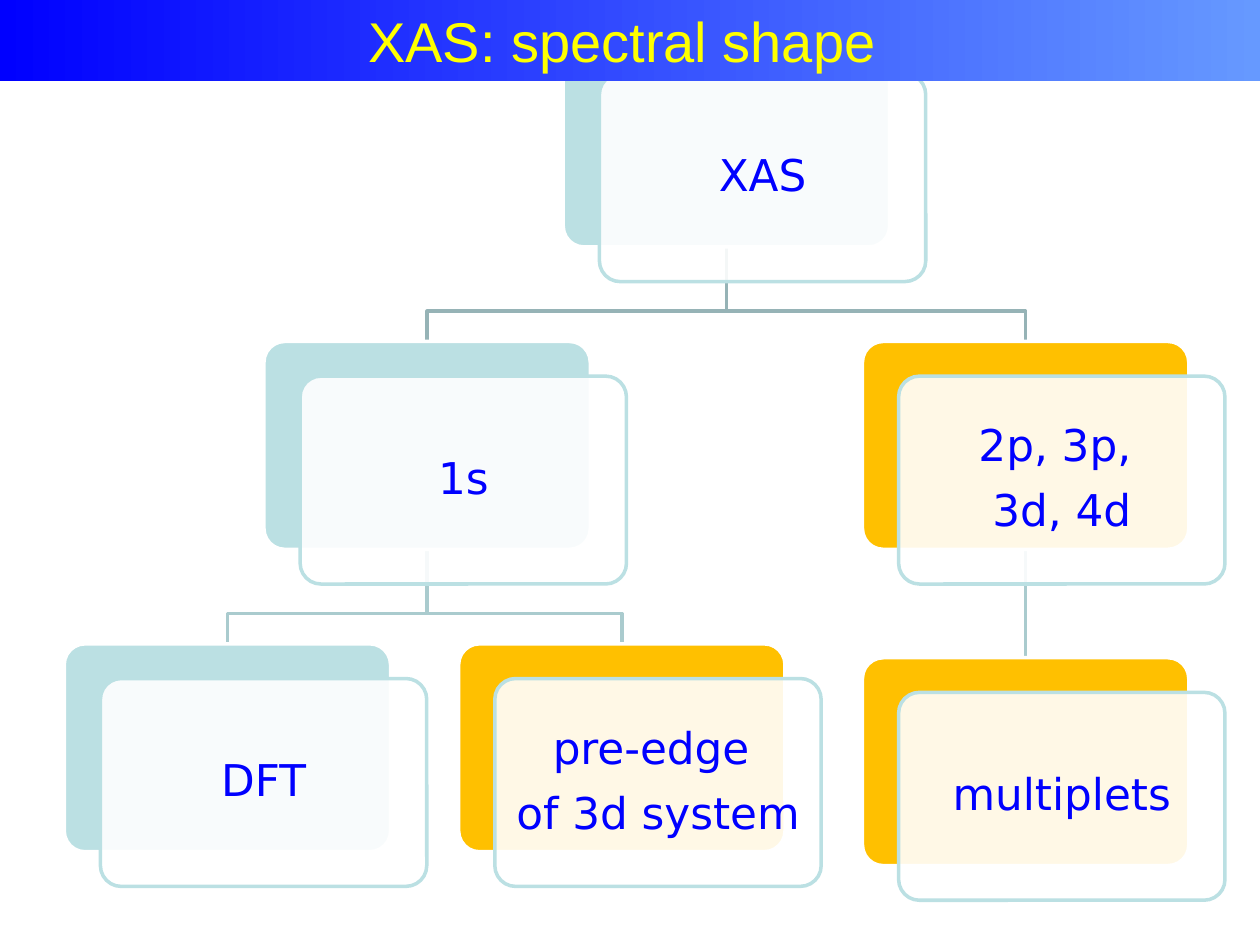
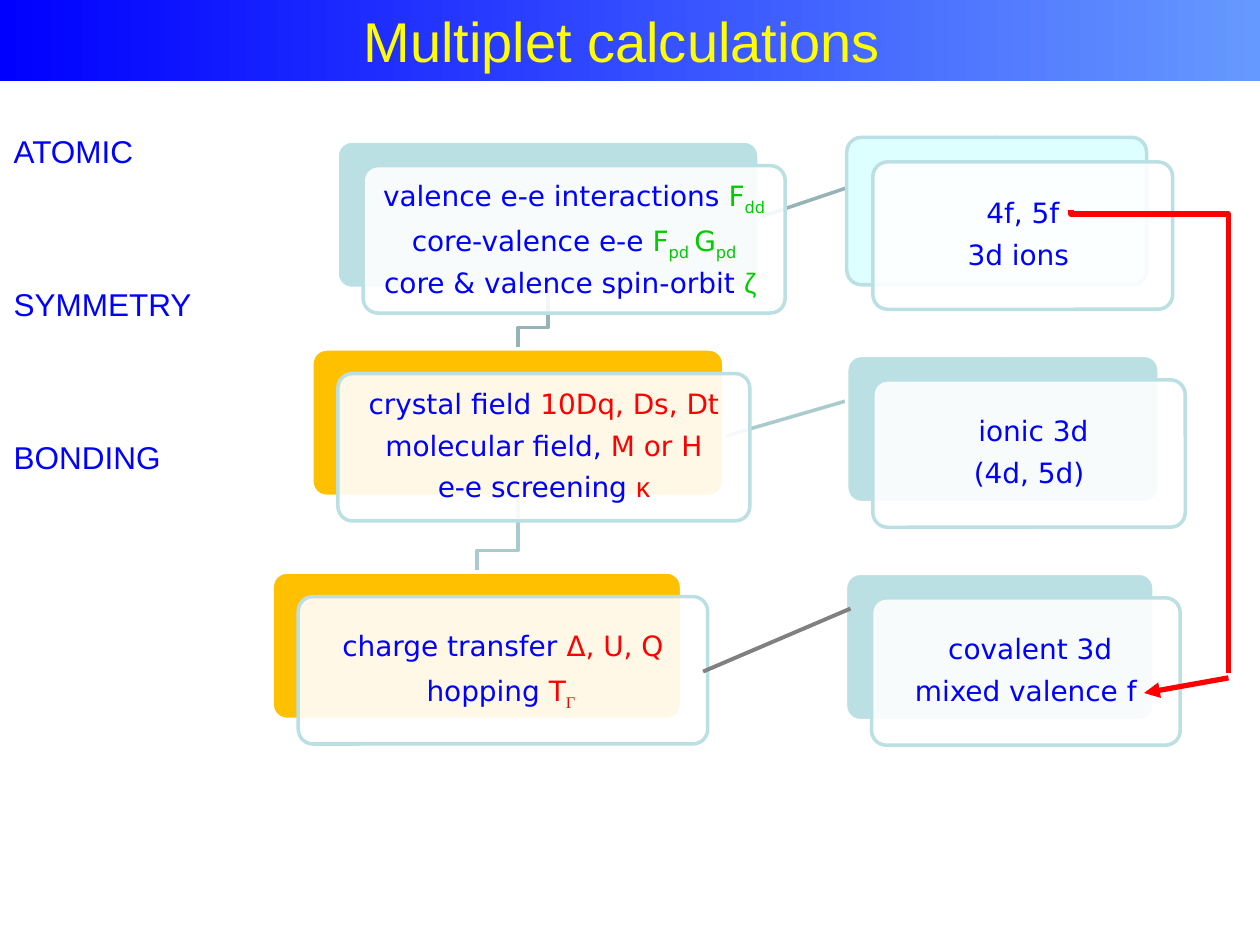
from dataclasses import dataclass
from typing import Any, NamedTuple

from lxml.etree import SubElement
from pptx import Presentation
from pptx.dml.color import RGBColor as Rgb
from pptx.enum.shapes import MSO_CONNECTOR as Route, MSO_SHAPE as Preset
from pptx.enum.text import MSO_ANCHOR as Anchor, PP_ALIGN as Align
from pptx.oxml.ns import qn
from pptx.util import Inches, Pt

SLIDE_WIDTH, SLIDE_HEIGHT = Inches(10), Inches(7.5)
COLUMNS, ROWS = 100, 75


@dataclass(frozen=True)
class Theme:
    blue: str = "0000FF"
    band_end: str = "6699FF"
    yellow: str = "FFFF00"
    white: str = "FFFFFF"
    teal: str = "BBE0E3"
    pale: str = "DDFFFF"
    amber: str = "FFC000"
    green: str = "00CC00"
    red: str = "FF0000"
    gray: str = "808080"
    root_link: str = "96B3B6"
    inner_link: str = "AACBCE"
    title_size: int = 32
    tree_size: int = 25
    label_size: int = 18
    detail_size: int = 16
    sans: str = "Arial"
    card_font: str = "DejaVu Sans"
    serif: str = "Times New Roman"


THEME = Theme()


class Span(NamedTuple):
    text: str
    color: str = THEME.blue
    font: str = THEME.card_font
    lowered: bool = False


class Point(NamedTuple):
    column: float
    row: float


class CardStyle(NamedTuple):
    height: float
    shift: Point
    inset: float
    text_size: int
    elbow_gap: float


@dataclass(frozen=True)
class Card:
    left: float
    top: float
    width: float
    lines: tuple[tuple[Span, ...], ...]
    fill: str = THEME.teal
    border: str = THEME.white

    def top_center(self) -> Point:
        return Point(self.left + self.width / 2, self.top)

    def bottom_center(self, style: CardStyle) -> Point:
        return Point(self.left + self.width / 2, self.top + style.height)


class Link(NamedTuple):
    parent: str
    child: str
    color: str
    direct: bool = False


TREE = CardStyle(16.5, Point(2.87, 2.75), 0.09, THEME.tree_size, 2.4)
DETAIL = CardStyle(11.7, Point(2.07, 1.95), 0.06, THEME.detail_size, 1.7)


def x(columns: float) -> int:
    return round(SLIDE_WIDTH * columns / COLUMNS)


def y(rows: float) -> int:
    return round(SLIDE_HEIGHT * rows / ROWS)


def box(left: float, top: float, width: float, height: float) -> tuple[int, ...]:
    return x(left), y(top), x(width), y(height)


def assign(target: Any, values: dict[str, Any]) -> None:
    for key, value in values.items():
        setattr(target, key, value)


def plain(*texts: str) -> tuple[tuple[Span, ...], ...]:
    return tuple((Span(text),) for text in texts)


def stroke(line: Any, color: str, width: float) -> None:
    line.color.rgb = Rgb.from_string(color)
    line.width = Pt(width)


def write(paragraph: Any, spans: tuple[Span, ...], size: int) -> None:
    for span in spans:
        run = paragraph.add_run()
        run.text = span.text
        assign(run.font, {"size": Pt(size), "name": span.font})
        run.font.color.rgb = Rgb.from_string(span.color)
        if span.lowered:
            run.font._element.set("baseline", "-25000")


def write_lines(frame: Any, lines: tuple[tuple[Span, ...], ...], size: int,
                layout: dict[str, Any]) -> None:
    for index, spans in enumerate(lines):
        paragraph = frame.paragraphs[0] if index == 0 else frame.add_paragraph()
        assign(paragraph, layout)
        write(paragraph, spans, size)


def draw_line(slide: Any, start: Point, end: Point, color: str, width: float,
              route: Any = Route.STRAIGHT) -> Any:
    line = slide.shapes.add_connector(route, x(start.column), y(start.row),
                                      x(end.column), y(end.row))
    stroke(line.line, color, width)
    SubElement(line._element.spPr, qn("a:effectLst"))
    return line


def draw_elbow(slide: Any, points: list[Point], color: str) -> None:
    corners = [(x(point.column), y(point.row)) for point in points]
    builder = slide.shapes.build_freeform(*corners[0])
    builder.add_line_segments(corners[1:], close=False)
    elbow = builder.convert_to_shape()
    elbow.fill.background()
    elbow.shadow.inherit = False
    stroke(elbow.line, color, 2)


def draw_link(slide: Any, link: Link, cards: dict[str, Card], style: CardStyle) -> None:
    start = cards[link.parent].bottom_center(style)
    end = cards[link.child].top_center()
    if link.direct:
        draw_line(slide, start, end, link.color, 2)
        return
    bend = end.row - style.elbow_gap
    draw_elbow(slide, [start, Point(start.column, bend), Point(end.column, bend), end],
               link.color)


def draw_panel(slide: Any, place: tuple[int, ...], fill: str, border: str) -> Any:
    panel = slide.shapes.add_shape(Preset.ROUNDED_RECTANGLE, *place)
    panel.adjustments[0] = 0.1
    panel.shadow.inherit = False
    panel.fill.solid()
    panel.fill.fore_color.rgb = Rgb.from_string(fill)
    stroke(panel.line, border, 2)
    return panel


def draw_card(slide: Any, card: Card, style: CardStyle) -> None:
    draw_panel(slide, box(card.left, card.top, card.width, style.height),
               card.fill, card.border)
    front = draw_panel(slide, box(card.left + style.shift.column, card.top + style.shift.row,
                                  card.width, style.height), THEME.white, THEME.teal)
    tint = front._element.spPr.find(qn("a:solidFill")).find(qn("a:srgbClr"))
    SubElement(tint, qn("a:alpha"), val="90000")
    inset = Inches(style.inset)
    sides = ("left", "top", "right", "bottom")
    assign(front.text_frame, {f"margin_{side}": inset for side in sides}
           | {"word_wrap": True, "vertical_anchor": Anchor.MIDDLE})
    write_lines(front.text_frame, card.lines, style.text_size,
                {"alignment": Align.CENTER, "line_spacing": 0.9,
                 "space_after": Pt(style.text_size * 0.4)})


def draw_diagram(slide: Any, cards: dict[str, Card], links: list[Link],
                 style: CardStyle) -> None:
    for link in links:
        draw_link(slide, link, cards, style)
    for card in cards.values():
        draw_card(slide, card, style)


def draw_title(slide: Any, title: str) -> None:
    band = slide.shapes.add_shape(Preset.RECTANGLE, *box(0, 0, COLUMNS, 6.4))
    band.shadow.inherit = False
    band.line.fill.background()
    band.fill.gradient()
    band.fill.gradient_angle = 0
    for stop, color in zip(band.fill.gradient_stops, (THEME.blue, THEME.band_end)):
        stop.color.rgb = Rgb.from_string(color)
    assign(band.text_frame, {"word_wrap": True, "vertical_anchor": Anchor.MIDDLE})
    write_lines(band.text_frame, ((Span(title, THEME.yellow, THEME.sans),),),
                THEME.title_size, {"alignment": Align.CENTER})


def draw_stage_labels(slide: Any, *stages: str) -> None:
    labels = slide.shapes.add_textbox(*box(0.1, 10, 24.2, 43.4))
    labels.text_frame.word_wrap = True
    write_lines(labels.text_frame, tuple((Span(stage, font=THEME.sans),) for stage in stages),
                THEME.label_size, {})
    for paragraph in labels.text_frame.paragraphs[1:]:
        paragraph.space_before = Pt(65.8)


def draw_mixed_valence_arrow(slide: Any) -> None:
    bend = draw_line(slide, Point(109.6, 28.8), Point(72.9, 41.3), THEME.red, 3, Route.ELBOW)
    properties = bend._element.spPr
    properties.find(qn("a:xfrm")).set("rot", "16200000")
    guides = properties.find(qn("a:prstGeom")).find(qn("a:avLst"))
    SubElement(guides, qn("a:gd"), name="adj1", fmla="val 800")
    arrow = draw_line(slide, Point(97.5, 53.8), Point(90.8, 55), THEME.red, 3)
    SubElement(arrow._element.spPr.find(qn("a:ln")), qn("a:tailEnd"), type="triangle")


def build_spectral_shape(slide: Any) -> None:
    width = 25.9
    top, middle, bottom = (3.1 + 24 * level for level in range(3))
    cards = {
        "xas": Card(44.7, top, width, plain("XAS")),
        "1s": Card(20.95, middle, width, plain("1s")),
        "dft": Card(5.1, bottom, width, plain("DFT")),
        "edge": Card(36.4, bottom, width, plain("pre-edge ", "of 3d system"), THEME.amber),
        "shells": Card(68.45, middle, width, plain("2p, 3p, ", "3d, 4d"), THEME.amber),
        "multiplets": Card(68.45, bottom + 1.1, width, plain("multiplets"), THEME.amber),
    }
    links = [
        Link("shells", "multiplets", THEME.inner_link, direct=True),
        Link("xas", "shells", THEME.root_link),
        Link("1s", "edge", THEME.inner_link),
        Link("1s", "dft", THEME.inner_link),
        Link("xas", "1s", THEME.root_link),
    ]
    draw_diagram(slide, cards, links, TREE)
    draw_title(slide, "XAS: spectral shape ")


def build_multiplet_calculations(slide: Any) -> None:
    green, red = THEME.green, THEME.red
    atomic = (
        (Span("valence e-e interactions "), Span("F", green), Span("dd", green, lowered=True)),
        (Span("core-valence e-e "), Span("F", green), Span("pd ", green, lowered=True),
         Span("G", green), Span("pd", green, lowered=True)),
        (Span("core & valence spin-orbit "), Span("ζ ", green, THEME.sans)),
    )
    symmetry = (
        (Span("crystal field "), Span("10Dq, Ds, Dt", red)),
        (Span("molecular field, "), Span("M or H", red)),
        (Span("e-e screening "), Span("κ", red, THEME.sans)),
    )
    bonding = (
        (Span("charge transfer "), Span("Δ, U, Q", red)),
        (Span("hopping"), Span(" T", red), Span("Γ ", red, THEME.serif, True)),
    )
    cards = {
        "atomic": Card(26.75, 11.2, 33.5, atomic),
        "symmetry": Card(24.75, 27.7, 32.7, symmetry, THEME.amber),
        "bonding": Card(21.6, 45.4, 32.5, bonding, THEME.amber),
        "ionic": Card(67.2, 28.2, 24.8, plain(" ionic 3d", "(4d, 5d)")),
        "ions": Card(67.2, 10.9, 23.8, plain("4f, 5f", "3d ions "), THEME.pale, THEME.teal),
        "covalent": Card(67.1, 45.5, 24.5, plain(" covalent 3d", "mixed valence f")),
    }
    links = [
        Link("atomic", "ions", THEME.root_link, direct=True),
        Link("symmetry", "ionic", THEME.inner_link, direct=True),
        Link("symmetry", "bonding", THEME.inner_link),
        Link("atomic", "symmetry", THEME.root_link),
    ]
    draw_diagram(slide, cards, links, DETAIL)
    draw_line(slide, Point(55.8, 53.3), Point(67.5, 48.3), THEME.gray, 2.25)
    draw_stage_labels(slide, "ATOMIC", "SYMMETRY", "BONDING")
    draw_title(slide, "Multiplet calculations ")
    draw_mixed_valence_arrow(slide)


def main() -> None:
    deck = Presentation()
    assign(deck, {"slide_width": SLIDE_WIDTH, "slide_height": SLIDE_HEIGHT})
    for build in (build_spectral_shape, build_multiplet_calculations):
        build(deck.slides.add_slide(deck.slide_layouts[6]))
    deck.save("out.pptx")


if __name__ == "__main__":
    main()
